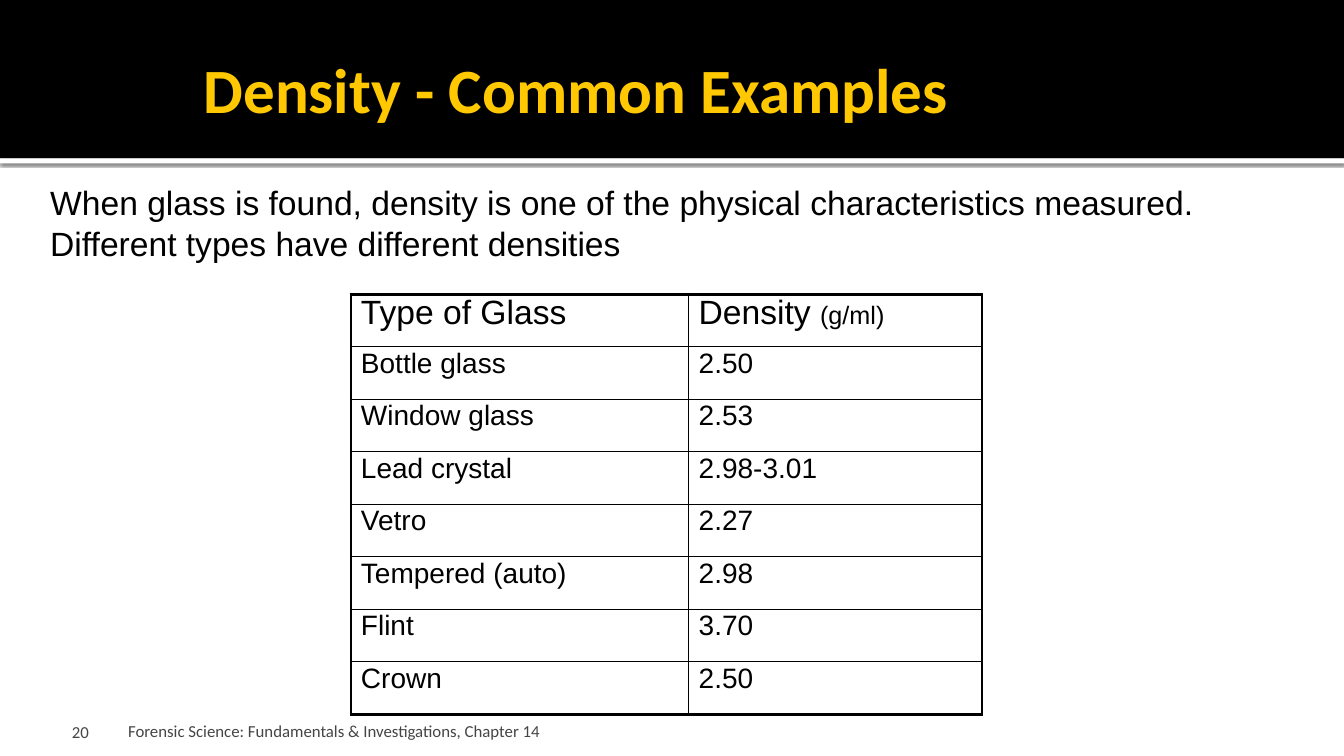
from lxml import etree
from pptx import Presentation
from pptx.dml.color import RGBColor
from pptx.enum.shapes import MSO_SHAPE
from pptx.enum.text import MSO_ANCHOR, MSO_AUTO_SIZE, PP_ALIGN
from pptx.oxml import parse_xml
from pptx.oxml.ns import nsdecls, qn
from pptx.util import Inches, Pt

RECT = MSO_SHAPE.RECTANGLE
MID, LOW, TOP = MSO_ANCHOR.MIDDLE, MSO_ANCHOR.BOTTOM, MSO_ANCHOR.TOP
LEFT, RIGHT = PP_ALIGN.LEFT, PP_ALIGN.RIGHT
INK = {"black": "000000", "white": "FFFFFF", "gold": "FFC800", "grey": "454545"}


def write(frame, runs, font="Arial", color="black", bold=False, align=LEFT,
          anchor=TOP, pads=(0.1, 0.05, 0.1, 0.05)):
    """Fill a frame with one paragraph of (text, size) runs."""
    frame.word_wrap = True
    frame.vertical_anchor = anchor
    sides = ("margin_left", "margin_top", "margin_right", "margin_bottom")
    for side, pad in zip(sides, pads):
        setattr(frame, side, Inches(pad))
    para = frame.paragraphs[0]
    para.alignment = align
    for text, size in runs:
        run = para.add_run()
        run.text = text
        run.font.name = font
        run.font.size = Pt(size)
        run.font.bold = bold
        run.font.color.rgb = RGBColor.from_string(INK[color])
    return para


def edge(cell, side, width):
    """Draw one black border of a table cell."""
    line = etree.SubElement(cell._tc.get_or_add_tcPr(), qn("a:ln" + side),
                            w=str(Pt(width)))
    fill = etree.SubElement(line, qn("a:solidFill"))
    etree.SubElement(fill, qn("a:srgbClr"), val=INK["black"])


deck = Presentation()
deck.slide_width, deck.slide_height = Inches(13.33), Inches(7.5)
slide = deck.slides.add_slide(deck.slide_layouts[5])
shapes = slide.shapes
title = shapes.title

# Header band and the white strip below it, behind the title
for color, top, height in (("white", 1.57, 0.05), ("black", 0, 1.57)):
    band = shapes.add_shape(RECT, 0, Inches(top), Inches(13.33), Inches(height))
    band.fill.solid()
    band.fill.fore_color.rgb = RGBColor.from_string(INK[color])
    band.line.fill.background()
    band.shadow.inherit = False
    if color == "white":
        band.element.spPr.find(qn("a:effectLst")).append(parse_xml(
            f'<a:outerShdw {nsdecls("a")} blurRad="{Pt(2.5)}" dist="{Pt(0.8)}" '
            f'dir="5400000"><a:srgbClr val="{INK["black"]}">'
            '<a:alpha val="60000"/></a:srgbClr></a:outerShdw>'))
    title.element.addprevious(band.element)

# Title
title.left, title.top = Inches(1.92), Inches(0.25)
title.width, title.height = Inches(8.67), Inches(1.25)
title.text_frame.auto_size = MSO_AUTO_SIZE.NONE
write(title.text_frame, [("Density - Common Examples", 45)], font="Calibri",
      color="gold", bold=True, anchor=MID, pads=(0.1, 0.05, 0.05, 0.05))

# Intro text
intro = shapes.add_textbox(Inches(0.4), Inches(1.76), Inches(12.44), Inches(0.91))
write(intro.text_frame, [("When glass is found, density is one of the physical "
                          "characteristics measured. Different types have "
                          "different densities", 24)])

# Footer and slide number
notes = (
    ("Forensic Science: Fundamentals & Investigations, Chapter 14",
     1.22, 11.11, 0.52, LEFT, 0.05),
    ("20", 0.12, 0.86, 0.53, RIGHT, 0.1),
)
for text, left, width, height, align, pad in notes:
    box = shapes.add_textbox(Inches(left), Inches(6.83), Inches(width), Inches(height))
    write(box.text_frame, [(text, 12)], font="Calibri", color="grey",
          align=align, anchor=LOW, pads=(pad, 0.05, pad, 0))

# Density table
rows = [
    ("Type of Glass", "Density "),
    ("Bottle glass", "2.50"),
    ("Window glass", "2.53"),
    ("Lead crystal", "2.98-3.01"),
    ("Vetro", "2.27"),
    ("Tempered (auto)", "2.98"),
    ("Flint", "3.70"),
    ("Crown", "2.50"),
]
last = len(rows) - 1
table = shapes.add_table(len(rows), 2, Inches(3.48), Inches(2.92),
                         Inches(6.26), Inches(4.17)).table
table.first_row = table.horz_banding = False
table.columns[0].width, table.columns[1].width = Inches(3.35), Inches(2.91)
for r, row in enumerate(rows):
    for c, text in enumerate(row):
        cell = table.cell(r, c)
        runs = [(text, 20 if r else 24)]
        if (r, c) == (0, 1):
            runs.append(("(g/ml)", 18))
        para = write(cell.text_frame, runs)
        para.line_spacing = 0.85
        gap = etree.SubElement(para._p.get_or_add_pPr(), qn("a:spcBef"))
        etree.SubElement(gap, qn("a:spcPct"), val="35000")
        # Thick outer frame, thin inner lines
        outer = {"L": c == 0, "R": c == 1, "T": r == 0, "B": r == last}
        for side, thick in outer.items():
            edge(cell, side, 2.25 if thick else 1)
        cell.fill.background()

deck.save("out.pptx")
